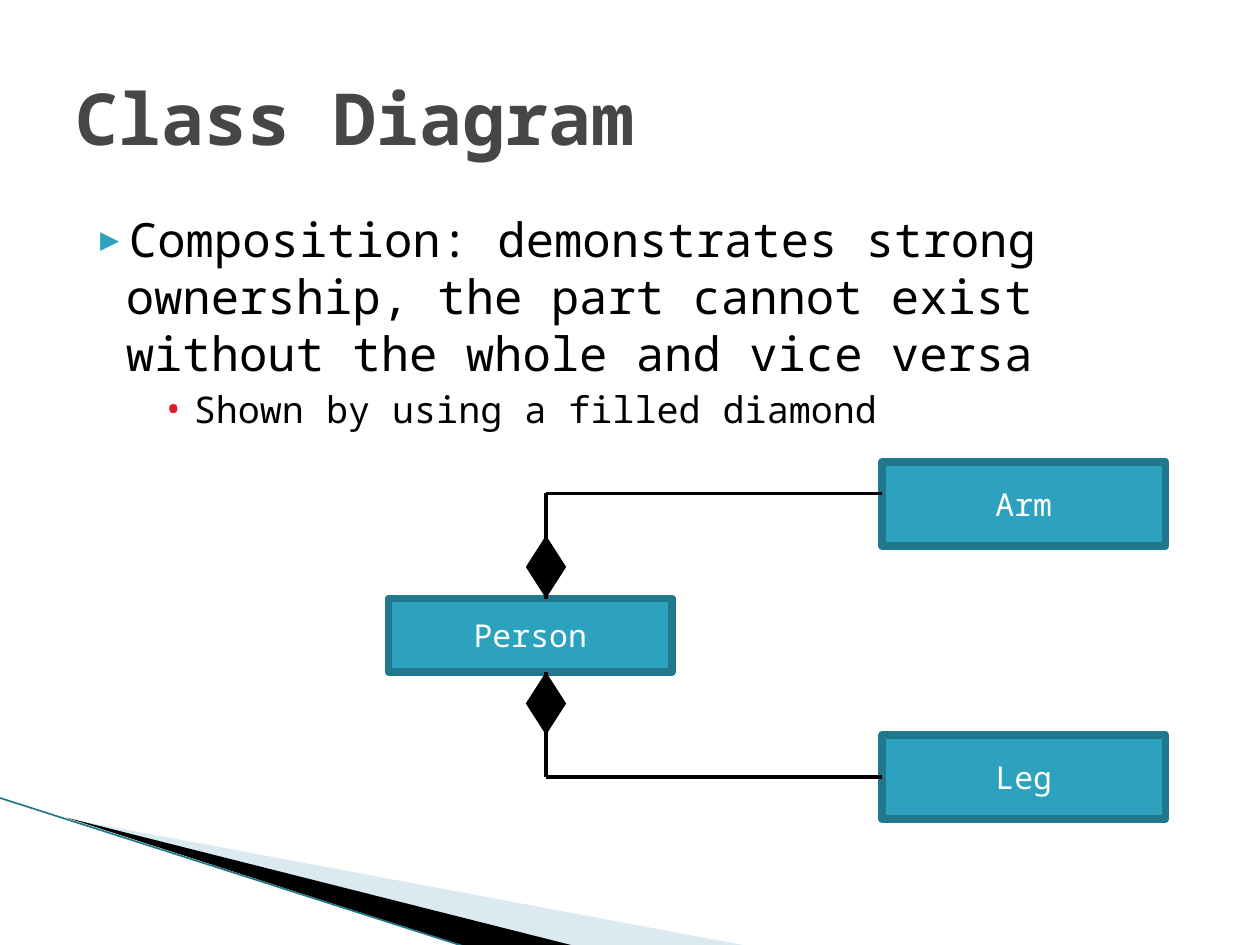
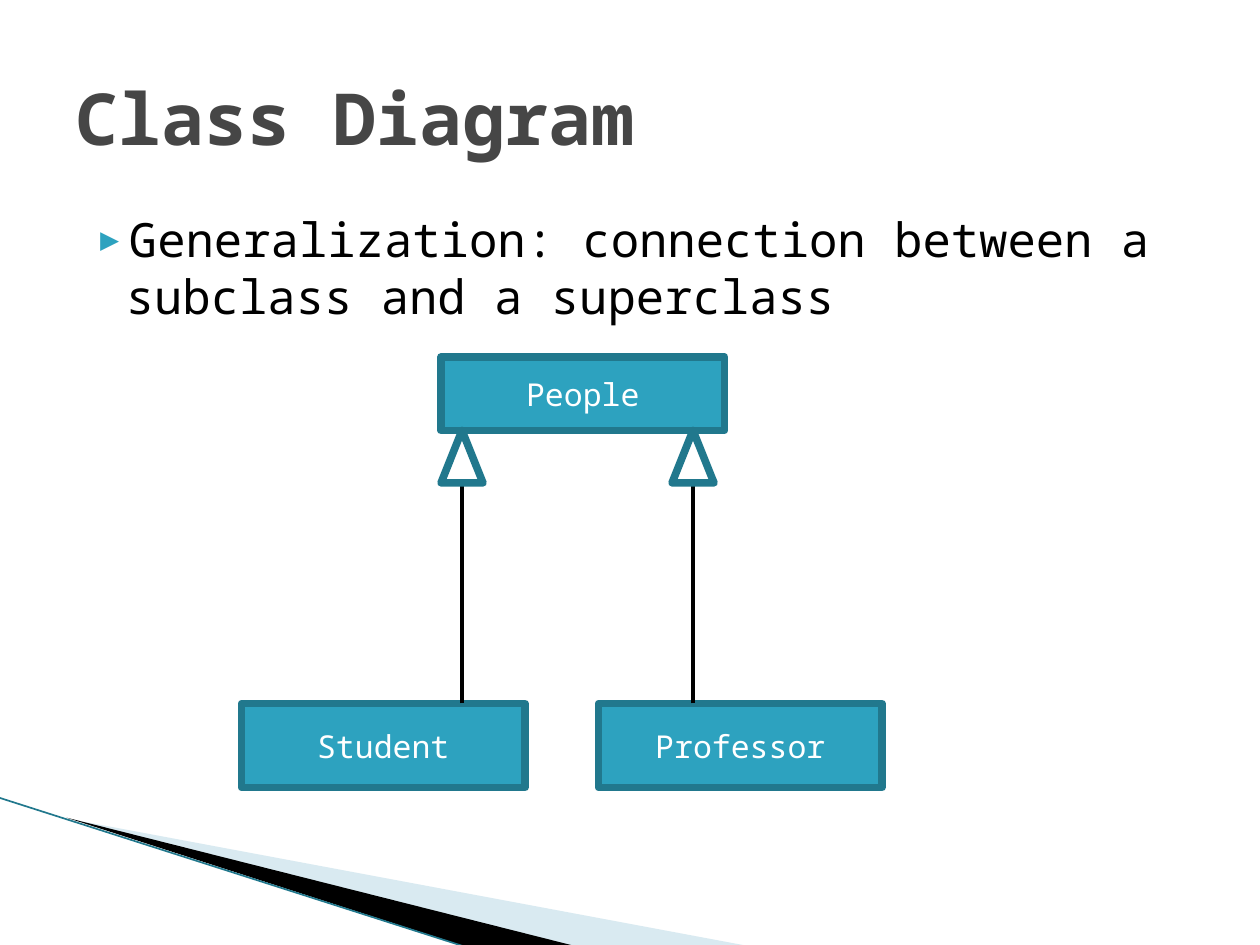
from lxml import etree
from pptx import Presentation
from pptx import util as u
from pptx.dml.color import RGBColor
from pptx.enum import shapes, text
from pptx.oxml.ns import qn

FONT = "Noto Sans Mono"
TEAL = RGBColor(0x2D, 0xA2, 0xBF)
DARK_TEAL = RGBColor(0x21, 0x78, 0x8D)
PALE_BLUE = RGBColor(0xA0, 0xCB, 0xDC)
RED = RGBColor(0xDA, 0x1F, 0x28)
GREY = RGBColor(0x46, 0x46, 0x46)
BLACK = RGBColor(0, 0, 0)
WHITE = RGBColor(255, 255, 255)

CELLS_PER_INCH = 12
BOX_WIDTH = 27
DIAMOND = (shapes.MSO_SHAPE.FLOWCHART_DECISION, 3.84, 6, BLACK, None)
TRIANGLE = (shapes.MSO_SHAPE.ISOSCELES_TRIANGLE, 4, 5, WHITE, DARK_TEAL)

LEVELS = [
    dict(size=27, bullet="▶", bullet_color=TEAL, bullet_size=68,
         margin=0.4, indent=-0.28, before=4),
    dict(size=21, bullet="•", bullet_color=RED, bullet_size=100,
         margin=0.94, indent=-0.25, before=3.5),
]

SLIDES = [
    dict(
        title="Class Diagram",
        bullets=[
            (0, "Composition: demonstrates strong ownership, the part "
                "cannot exist without the whole and vice versa"),
            (1, "Shown by using a filled diamond"),
        ],
        classes=[("Person", 37, 57, 7), ("Arm", 84, 44, 8), ("Leg", 84, 70, 8)],
        links=[[(52, 57), (52, 47), (84, 47)], [(52, 64), (52, 74), (84, 74)]],
        marker=DIAMOND,
        marker_tops=[(52, 51), (52, 64)],
    ),
    dict(
        title="Class Diagram",
        bullets=[(0, "Generalization: connection between a subclass "
                     "and a superclass")],
        classes=[("People", 42, 34, 7), ("Student", 23, 67, 8),
                 ("Professor", 57, 67, 8)],
        links=[[(44, 67), (44, 43)], [(66, 67), (66, 43)]],
        marker=TRIANGLE,
        marker_tops=[(44, 41), (66, 41)],
    ),
]

WEDGES = [
    (PALE_BLUE, 40, [(0.55, 6.5), (5.95, 7.51), (4.56, 7.51)]),
    (BLACK, 100, [(0.53, 6.49), (4.57, 7.51), (3.72, 7.52)]),
]
EDGE = [(-0.01, 6.33), (3.71, 7.52)]


def cells(count):
    return u.Inches(count / CELLS_PER_INCH)


def add_bullet(paragraph, level):
    properties = paragraph._p.get_or_add_pPr()
    properties.set("marL", str(u.Inches(level["margin"])))
    properties.set("indent", str(u.Inches(level["indent"])))
    color = etree.SubElement(properties, qn("a:buClr"))
    etree.SubElement(color, qn("a:srgbClr"), val=str(level["bullet_color"]))
    etree.SubElement(properties, qn("a:buSzPct"),
                     val=str(level["bullet_size"] * 1000))
    etree.SubElement(properties, qn("a:buFont"), typeface=FONT)
    etree.SubElement(properties, qn("a:buChar"), char=level["bullet"])


def write(paragraph, content, size=18, color=BLACK, bold=False,
          align=text.PP_ALIGN.LEFT, level=None):
    if level:
        add_bullet(paragraph, level)
    paragraph.alignment = align
    run = paragraph.add_run()
    run.text = content
    run.font.name = FONT
    run.font.size = u.Pt(size)
    run.font.bold = bold
    run.font.color.rgb = color


def paint(shape, fill, outline=None):
    shape.shadow.inherit = False
    shape.fill.solid()
    shape.fill.fore_color.rgb = fill
    if outline is None:
        shape.line.fill.background()
        return
    shape.line.color.rgb = outline
    shape.line.width = u.Pt(4.33)
    etree.SubElement(shape._element.spPr.find(qn("a:ln")), qn("a:round"))


def add_line(slide, start, end, color, width):
    line = slide.shapes.add_connector(shapes.MSO_CONNECTOR.STRAIGHT,
                                      *start, *end)
    line.line.color.rgb = color
    line.line.width = u.Pt(width)
    etree.SubElement(line._element.spPr, qn("a:effectLst"))


def add_text_frame(slide, top, height, anchor):
    box = slide.shapes.add_textbox(u.Inches(0.5), u.Inches(top),
                                   u.Inches(9), u.Inches(height))
    frame = box.text_frame
    frame.word_wrap = True
    frame.vertical_anchor = anchor
    return frame


def add_band(slide):
    for color, opacity, corners in WEDGES:
        points = [(u.Inches(x), u.Inches(y)) for x, y in corners]
        builder = slide.shapes.build_freeform(*points[0])
        builder.add_line_segments(points[1:], close=True)
        wedge = builder.convert_to_shape()
        paint(wedge, color)
        if opacity < 100:
            fill = wedge._element.spPr.find(qn("a:solidFill"))
            etree.SubElement(fill[0], qn("a:alpha"), val=str(opacity * 1000))
    start, end = [(u.Inches(x), u.Inches(y)) for x, y in EDGE]
    add_line(slide, start, end, DARK_TEAL, 0.95)


def add_words(slide, title, bullets):
    body = add_text_frame(slide, 1.62, 4.95, text.MSO_ANCHOR.TOP)
    for index, (depth, content) in enumerate(bullets):
        paragraph = body.add_paragraph() if index else body.paragraphs[0]
        level = LEVELS[depth]
        write(paragraph, content, size=level["size"], level=level)
        if index:
            paragraph.space_before = u.Pt(level["before"])
    heading = add_text_frame(slide, 0.3, 1.25, text.MSO_ANCHOR.MIDDLE)
    write(heading.paragraphs[0], title, size=41, color=GREY, bold=True)


def add_diagram(slide, classes, links, marker, marker_tops):
    for name, left, top, height in classes:
        box = slide.shapes.add_shape(
            shapes.MSO_SHAPE.RECTANGLE, cells(left), cells(top),
            cells(BOX_WIDTH), cells(height))
        paint(box, TEAL, DARK_TEAL)
        box.text_frame.vertical_anchor = text.MSO_ANCHOR.MIDDLE
        write(box.text_frame.paragraphs[0], name, color=WHITE,
              align=text.PP_ALIGN.CENTER)
    for link in links:
        points = [(cells(x), cells(y)) for x, y in link]
        for start, end in zip(points, points[1:]):
            add_line(slide, start, end, BLACK, 1.75)
    preset, width, height, fill, outline = marker
    for center, top in marker_tops:
        symbol = slide.shapes.add_shape(
            preset, cells(center - width / 2), cells(top),
            cells(width), cells(height))
        paint(symbol, fill, outline)


def main():
    presentation = Presentation()
    presentation.slide_width = u.Inches(10)
    presentation.slide_height = u.Inches(7.5)
    for content in SLIDES:
        slide = presentation.slides.add_slide(presentation.slide_layouts[6])
        add_band(slide)
        add_words(slide, content["title"], content["bullets"])
        add_diagram(slide, content["classes"], content["links"],
                    content["marker"], content["marker_tops"])
    presentation.save("out.pptx")


if __name__ == "__main__":
    main()
